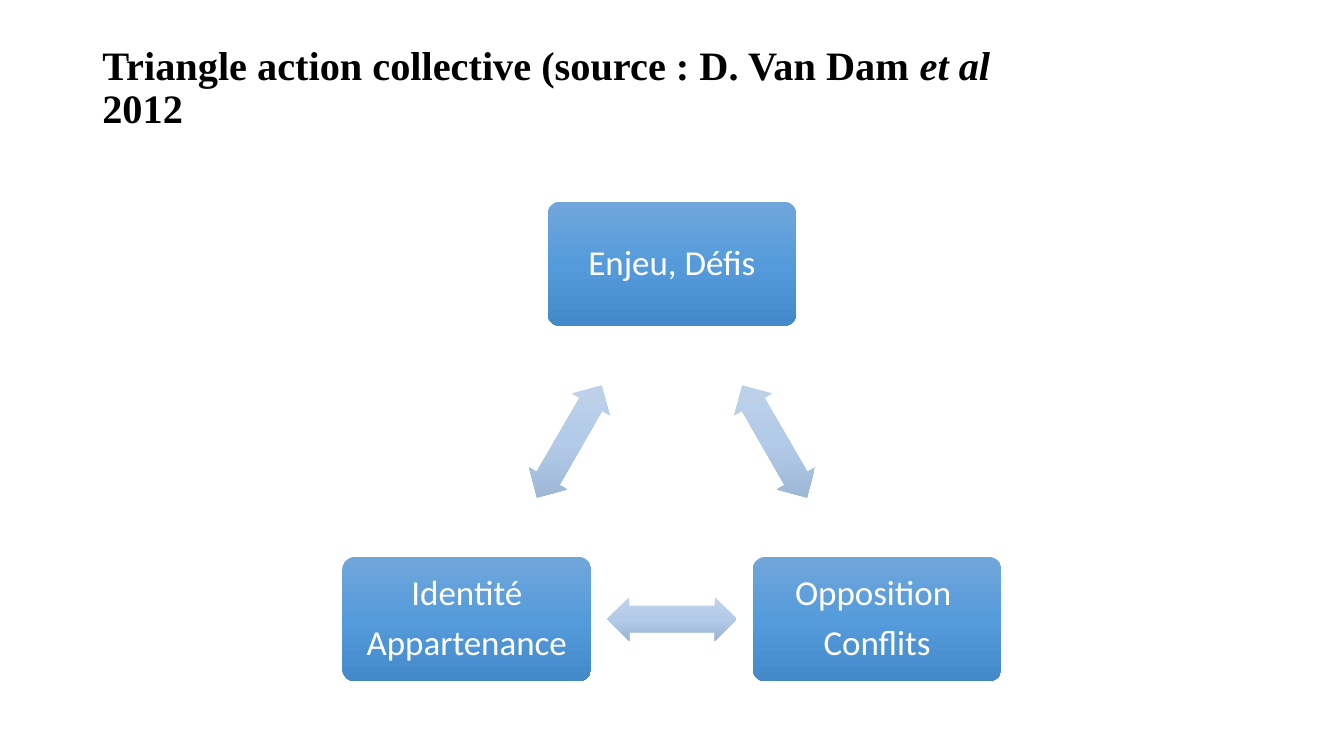
from dataclasses import dataclass
from math import cos, radians, sin

from lxml import etree
from pptx import Presentation, util as u
from pptx.dml import color
from pptx.enum import shapes, text
from pptx.oxml import ns


@dataclass(frozen=True)
class Theme:
    node_stops: tuple = ("71A6DB", "559BDB", "448ACA")
    arrow_stops: tuple = ("C0D2EB", "B3CBE9", "9BB4D3")
    title_color: str = "000000"
    node_color: str = "FFFFFF"
    title_font: str = "Times New Roman"
    node_font: str = "Calibri"
    title_size: float = 28.8
    node_size: float = 25
    line_spacing: float = 0.9
    node_gap: float = 8.75


def apply(target, formats):
    for name, value in formats.items():
        setattr(target, name, value)


class TriangleSlide:
    columns, rows = 160, 90

    def __init__(self, deck, theme):
        self.theme = theme
        self.page = deck.slides.add_slide(deck.slide_layouts[6])
        self.column = deck.slide_width / self.columns
        self.row = deck.slide_height / self.rows

    def place(self, left, top, width, height):
        return [
            u.Emu(round(cells * unit))
            for cells, unit in zip((left, top, width, height), (self.column, self.row) * 2)
        ]

    def add_span(self, para, words, font, size, tint, **formats):
        span = para.add_run()
        span.text = words
        apply(span.font, {"name": font, "size": u.Pt(size), **formats})
        span.font.color.rgb = color.RGBColor.from_string(tint)

    def title(self, area, lines):
        box = self.page.shapes.add_textbox(*self.place(*area))
        apply(box.text_frame, {"word_wrap": True, "vertical_anchor": text.MSO_ANCHOR.MIDDLE})
        para = box.text_frame.paragraphs[0]
        para.line_spacing = self.theme.line_spacing
        for index, line in enumerate(lines):
            if index:
                para.add_line_break()
            for words, italic in line:
                self.add_span(para, words, self.theme.title_font, self.theme.title_size,
                              self.theme.title_color, bold=True, italic=italic)

    def block(self, kind, center, size, adjustments, stops):
        left, top = (middle - extent / 2 for middle, extent in zip(center, size))
        shape = self.page.shapes.add_shape(kind, *self.place(left, top, *size))
        for index, value in enumerate(adjustments):
            shape.adjustments[index] = value
        shape.shadow.inherit = False
        shape.line.fill.background()
        shape.fill.gradient()
        shape.fill.gradient_angle = 270
        gradient = shape.element.spPr.find(ns.qn("a:gradFill"))
        gradient.set("rotWithShape", "0")
        stop_list = gradient.find(ns.qn("a:gsLst"))
        for stop in list(stop_list):
            stop_list.remove(stop)
        for index, tint in enumerate(stops):
            stop = etree.SubElement(stop_list, ns.qn("a:gs"), pos=str(index * 50000))
            etree.SubElement(stop, ns.qn("a:srgbClr"), val=tint)
        return shape

    def node(self, center, lines):
        shape = self.block(shapes.MSO_SHAPE.ROUNDED_RECTANGLE, center, (29.6, 14.8),
                           (0.1,), self.theme.node_stops)
        frame = shape.text_frame
        inset = u.Inches(0.14)
        apply(frame, {
            "word_wrap": True, "vertical_anchor": text.MSO_ANCHOR.MIDDLE,
            "margin_left": inset, "margin_right": inset,
            "margin_top": inset, "margin_bottom": inset,
        })
        for index, words in enumerate(lines):
            para = frame.add_paragraph() if index else frame.paragraphs[0]
            apply(para, {
                "alignment": text.PP_ALIGN.CENTER,
                "line_spacing": self.theme.line_spacing,
                "space_after": u.Pt(self.theme.node_gap),
            })
            self.add_span(para, words, self.theme.node_font, self.theme.node_size,
                          self.theme.node_color)

    def arrow(self, center, angle):
        shape = self.block(shapes.MSO_SHAPE.LEFT_RIGHT_ARROW, center, (15.4, 5.2),
                           (0.6, 0.5), self.theme.arrow_stops)
        shape.rotation = angle


def around(radius, angle):
    return 80 + radius * sin(radians(angle)), 59.6 - radius * cos(radians(angle))


def main():
    deck = Presentation()
    apply(deck, {"slide_width": u.Inches(13.33), "slide_height": u.Inches(7.5)})
    slide = TriangleSlide(deck, Theme())
    slide.title((11, 5.4, 138, 10.4), [
        [("Triangle action collective (source : D. Van Dam ", False), ("et al ", True)],
        [("2012 ", False)],
    ])
    radius = 28.2
    corners = [["Enjeu, Défis"], ["Opposition ", "Conflits"], ["Identité", "Appartenance"]]
    for index, lines in enumerate(corners):
        corner_angle = index * 120
        side_angle = corner_angle + 60
        slide.node(around(radius, corner_angle), lines)
        slide.arrow(around(radius / 2, side_angle), side_angle)
    deck.save("out.pptx")


if __name__ == "__main__":
    main()
